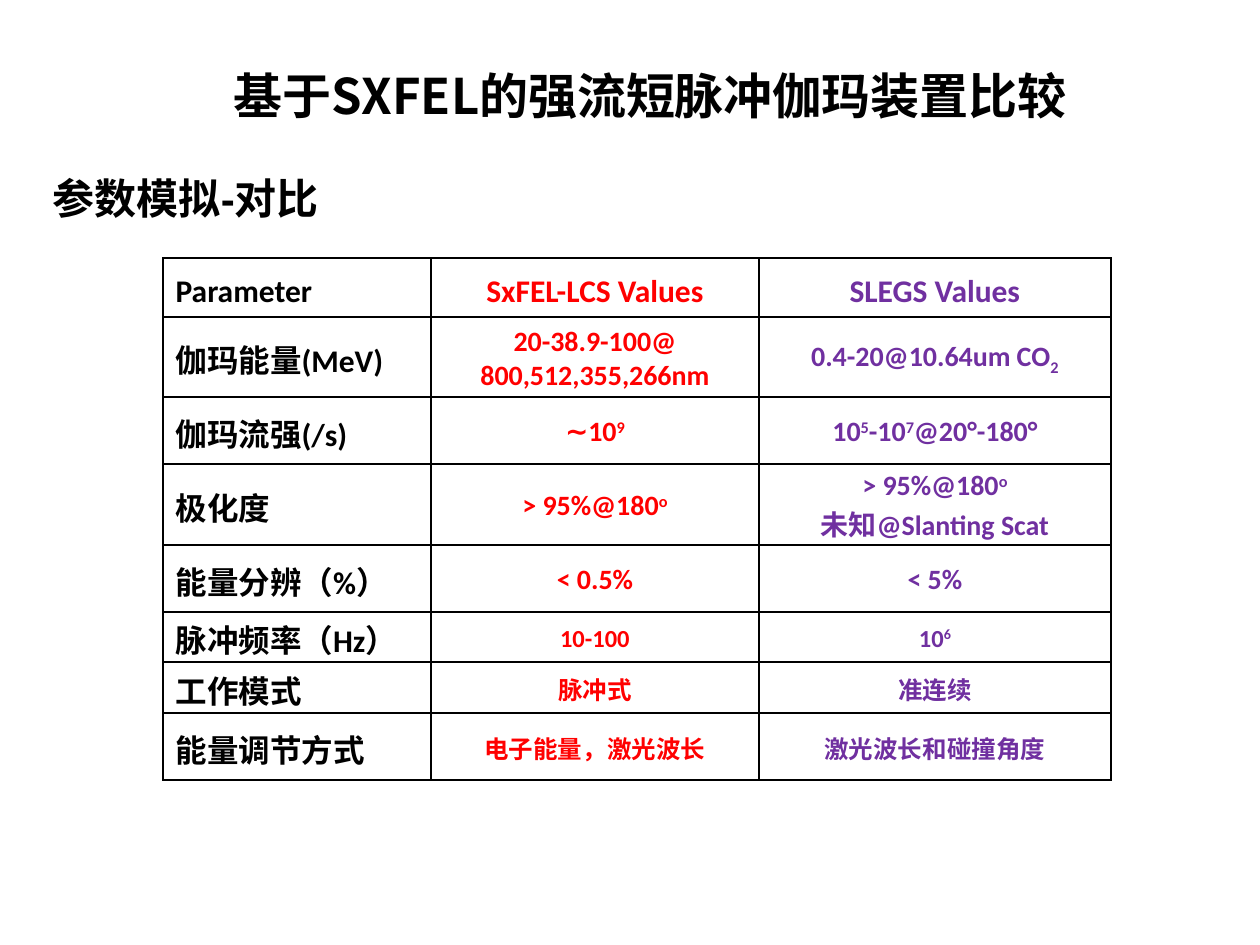
from lxml.etree import SubElement
from pptx import Presentation
from pptx.dml.color import RGBColor
from pptx.enum.text import MSO_ANCHOR as Anchor, PP_ALIGN as Align
from pptx.oxml.ns import qn
from pptx.util import Emu, Pt

EMU_PER_PX = 914400 // 126
COLORS = {"black": "000000", "sxfel": "FF0000", "slegs": "7030A0"}
CJK_FONT = "Noto Sans CJK SC"
BASELINES = {"^": "30000", "_": "-25000"}

COLUMN_WIDTHS = [268, 328, 352]
COLUMN_COLORS = ["black", "sxfel", "slegs"]
# Height in px, value size in pt, then the cells; "|^" raises and "|_" lowers a piece.
ROWS = [
    (59, 18, ["Parameter", "SxFEL-LCS Values", "SLEGS Values"]),
    (80, 16, ["伽玛能量(MeV)", "20-38.9-100@\n800,512,355,266nm", "0.4-20@10.64um CO|_2"]),
    (67, 16, ["伽玛流强(/s)", "∼10|^9", "10|^5|-10|^7|@20°-180°"]),
    (81, 16, ["极化度", "> 95%@180|^o", "> 95%@180|^o\n未知@Slanting Scat"]),
    (67, 16, ["能量分辨（%）", "< 0.5%", "< 5%"]),
    (50, 14, ["脉冲频率（Hz）", "10-100", "10|^6"]),
    (51, 14, ["工作模式", "脉冲式", "准连续"]),
    (67, 14, ["能量调节方式", "电子能量，激光波长", "激光波长和碰撞角度"]),
]


def px(value):
    return Emu(value * EMU_PER_PX)


class SlideBuilder:
    def __init__(self, slide):
        self.slide = slide

    def fill_frame(self, frame, text, size, font, color="black", align=Align.LEFT):
        """Fill a frame with one paragraph a line, all bold."""
        frame.word_wrap = True
        for index, line in enumerate(text.split("\n")):
            paragraph = frame.add_paragraph() if index else frame.paragraphs[0]
            paragraph.alignment = align
            paragraph.font.size = Pt(size)
            paragraph.font.bold = True
            paragraph.font.name = font
            paragraph.font.color.rgb = RGBColor.from_string(COLORS[color])
            for piece in line.split("|"):
                run = paragraph.add_run()
                run.text = piece.lstrip("^_")
                properties = run._r.get_or_add_rPr()
                if piece[0] in BASELINES:
                    properties.set("baseline", BASELINES[piece[0]])
                SubElement(properties, qn("a:ea"), typeface=CJK_FONT)

    def text(self, left, top, width, height, text, size, font, align=Align.LEFT, inset=13):
        box = self.slide.shapes.add_textbox(px(left), px(top), px(width), px(height))
        box.text_frame.margin_left = px(inset)
        self.fill_frame(box.text_frame, text, size, font, align=align)

    def border(self, cell):
        properties = cell._tc.get_or_add_tcPr()
        for index, side in enumerate(("a:lnL", "a:lnR", "a:lnT", "a:lnB")):
            line = properties.makeelement(qn(side), {"w": str(Pt(1))})
            fill = SubElement(line, qn("a:solidFill"))
            SubElement(fill, qn("a:srgbClr"), val=COLORS["black"])
            properties.insert(index, line)

    def table(self, left, top, widths, rows):
        height = sum(row[0] for row in rows)
        table = self.slide.shapes.add_table(
            len(rows), len(widths), px(left), px(top), px(sum(widths)), px(height)).table
        table.first_row = table.horz_banding = False
        for column, width in zip(table.columns, widths):
            column.width = px(width)
        for row_index, (height, value_size, texts) in enumerate(rows):
            table.rows[row_index].height = px(height)
            for column_index, text in enumerate(texts):
                cell = table.cell(row_index, column_index)
                cell.fill.background()
                cell.vertical_anchor = Anchor.MIDDLE if row_index else Anchor.BOTTOM
                cell.margin_top = px(4)
                cell.margin_bottom = px(0 if row_index else 6)
                self.border(cell)
                self.fill_frame(cell.text_frame, text, value_size if column_index else 18,
                                "Calibri", COLUMN_COLORS[column_index],
                                Align.CENTER if column_index else Align.LEFT)


def main():
    presentation = Presentation()
    presentation.slide_width, presentation.slide_height = px(1260), px(945)
    builder = SlideBuilder(presentation.slides.add_slide(presentation.slide_layouts[6]))
    builder.text(29, 166, 593, 63, "参数模拟-对比", 24, "Arial", inset=24)
    builder.text(29, 59, 1241, 100, "基于SXFEL的强流短脉冲伽玛装置比较", 28, CJK_FONT, Align.CENTER)
    builder.table(163, 258, COLUMN_WIDTHS, ROWS)
    presentation.save("out.pptx")


if __name__ == "__main__":
    main()
